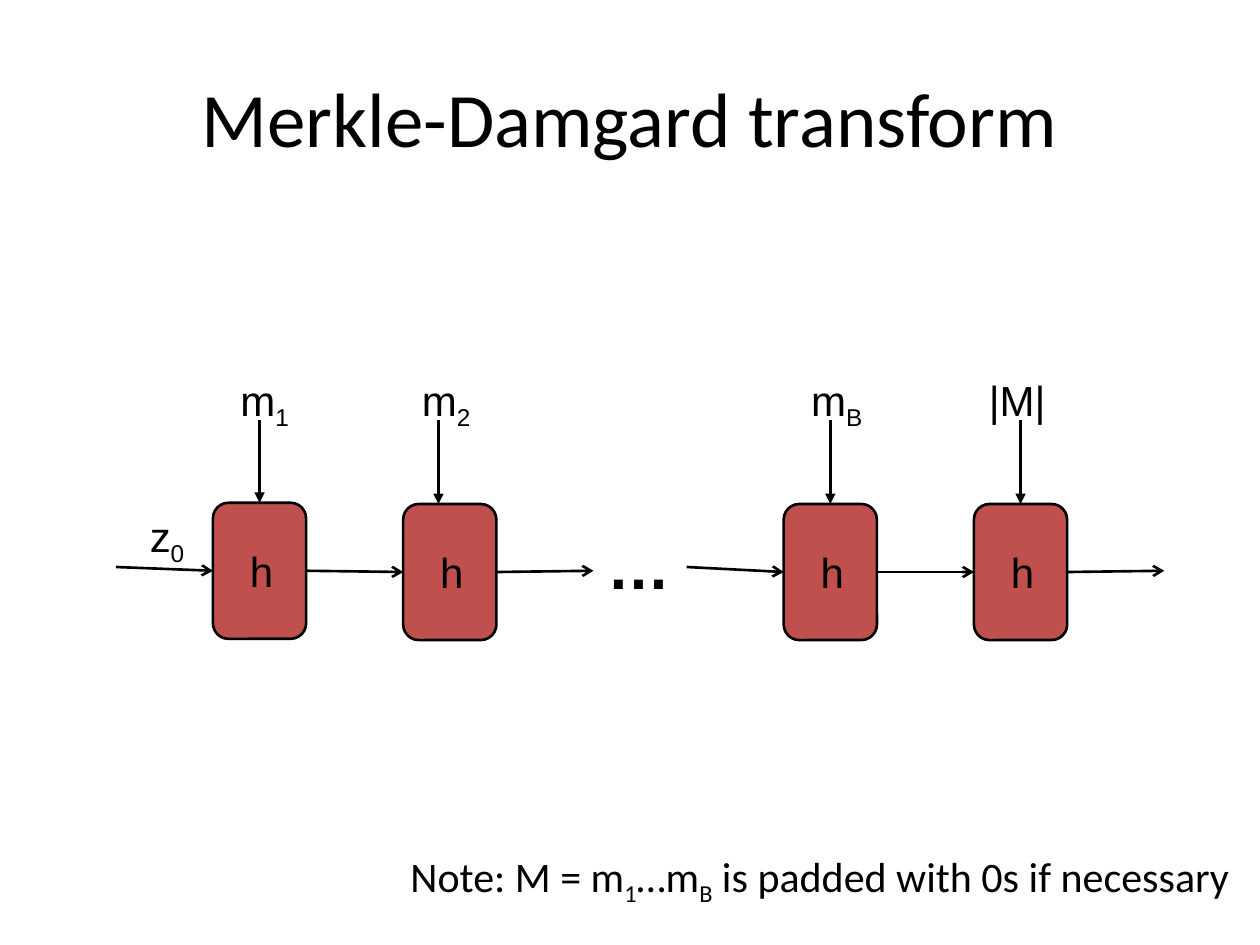
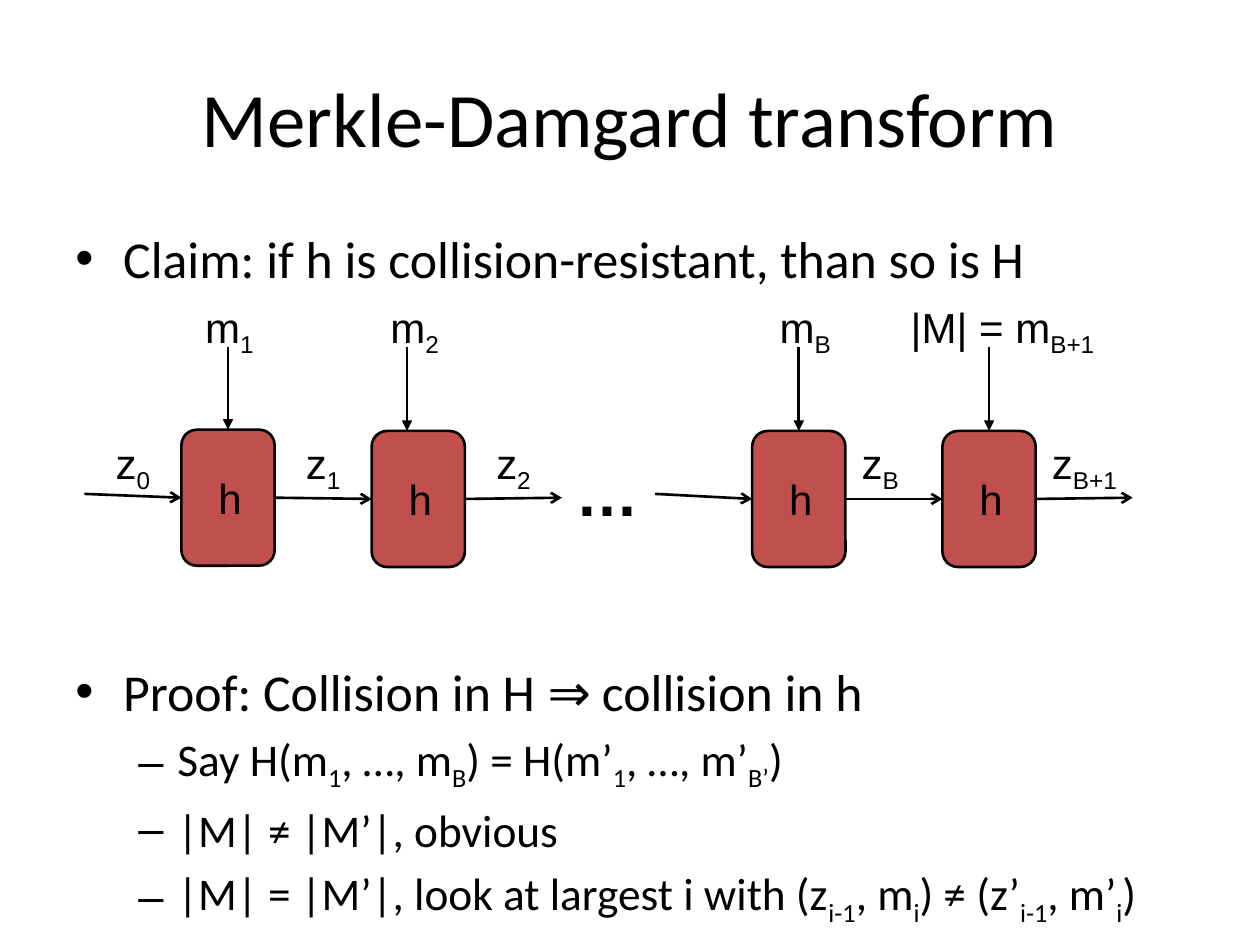
"""Build two slides on the Merkle-Damgard transform."""
from lxml.etree import SubElement
from pptx import Presentation
from pptx.dml.color import RGBColor as RGB
from pptx.enum.shapes import MSO_CONNECTOR as LINE, MSO_SHAPE as SHAPE
from pptx.enum.text import MSO_ANCHOR as ANCHOR, MSO_AUTO_SIZE as FIT, PP_ALIGN as ALIGN
from pptx.oxml.ns import qn
from pptx.util import Inches, Pt

COLORS = {"ink": "000000", "block": "C0504D", "page": "FFFFFF"}

prs = Presentation()
prs.slide_width, prs.slide_height = Inches(10), Inches(7.5)
COL, ROW = prs.slide_width / 100, prs.slide_height / 75


def text(s, x, y, w, h, lines, size=24, font="Arial", wrap=False):
    """Write lines in a text box; parts between tildes are subscripts."""
    sp = s.shapes.add_textbox(int(x * COL), int(y * ROW), int(w * COL), int(h * ROW))
    tf = sp.text_frame
    tf.word_wrap = wrap
    tf.auto_size = FIT.NONE if wrap else FIT.SHAPE_TO_FIT_TEXT
    for i, line in enumerate(lines):
        p = tf.add_paragraph() if i else tf.paragraphs[0]
        for j, part in enumerate(line.split("~")):
            if part:
                r = p.add_run()
                r.text = part
                r.font.size, r.font.name = Pt(size), font
                r.font.color.rgb = RGB.from_string(COLORS["ink"])
                if j % 2:
                    r.font._element.set("baseline", "-25000")
    return tf


def arrow(s, start, end, head, src=None, dst=None, sides=(3, 1)):
    """Draw an arrow and join it to the blocks given."""
    c = s.shapes.add_connector(LINE.STRAIGHT, int(start[0] * COL), int(start[1] * ROW),
                               int(end[0] * COL), int(end[1] * ROW))
    if src is not None:
        c.begin_connect(src, sides[0])
    if dst is not None:
        c.end_connect(dst, sides[1])
    c.line.width = Pt(1.5)
    c.line.color.rgb = RGB.from_string(COLORS["ink"])
    SubElement(c.line._get_or_add_ln(), qn("a:tailEnd"), type=head)
    SubElement(c._element.spPr, qn("a:effectLst"))


PITCH, GAP, BLOCK_W, BLOCK_H = 15.1, 7.7, 7.4, 10.8
chains = [
    {"x": 9.2, "y": 40,
     "inputs": {0: ("m~1~", 18.1, 6.1), 1: ("m~2~", 32.5, 6.1),
                3: ("m~B~", 63.4, 6.3), 4: ("|M|", 77.5, 6.6)},
     "states": {0: ("z~0~", 1.7, 4.9)}},
    {"x": 6.7, "y": 34.2,
     "inputs": {0: ("m~1~", 15.3, 6.1), 1: ("m~2~", 30, 6.1),
                3: ("m~B~", 60.9, 6.3), 4: ("|M| = m~B+1~", 71.3, 17.3)},
     "states": {0: ("z~0~", 1.5, 4.9), 1: ("z~1~", 1.5, 4.9), 2: ("z~2~", 1.5, 4.9),
                4: ("z~B~", 0.3, 5.2), 5: ("z~B+1~", 0.3, 7.8)}},
]

slides = []
for chain in chains:
    s = prs.slides.add_slide(prs.slide_layouts[6])
    slides.append(s)
    s.background.fill.solid()
    s.background.fill.fore_color.rgb = RGB.from_string(COLORS["page"])
    tf = text(s, 5, 3, 90, 12.5, ["Merkle-Damgard transform"], 44, "Calibri", True)
    tf.vertical_anchor = ANCHOR.MIDDLE
    tf.paragraphs[0].alignment = ALIGN.CENTER

    x0, y0, blocks = chain["x"], chain["y"], {}
    for slot, (label, label_x, label_w) in chain["inputs"].items():
        x, y = x0 + GAP + slot * PITCH, y0 if slot else y0 - 0.1
        sp = s.shapes.add_shape(SHAPE.ROUNDED_RECTANGLE, int(x * COL), int(y * ROW),
                                int(BLOCK_W * COL), int(BLOCK_H * ROW))
        sp.shadow.inherit = False
        sp.fill.solid()
        sp.fill.fore_color.rgb = RGB.from_string(COLORS["block"])
        sp.line.color.rgb = RGB.from_string(COLORS["ink"])
        sp.line.width = Pt(1.5)
        blocks[slot] = sp
        text(s, x + 1.95, y + 2.9, 3.9, 5.1, ["h"])
        text(s, label_x, y0 - 10.8, label_w, 5, [label])
        mid = x + BLOCK_W / 2 - (0.9 if slot == 1 else 0)
        arrow(s, (mid, y0 - 6.7), (mid, y), "triangle",
              dst=None if slot == 1 else sp, sides=(2, 0))

    for slot in range(6):
        x, y = x0 + slot * PITCH, y0 + 5.2
        arrow(s, (x, y - 0.2), (x + GAP, y + 0.1), "arrow",
              blocks.get(slot - 1), blocks.get(slot))
    for slot, (label, shift, width) in chain["states"].items():
        text(s, x0 + slot * PITCH + shift, y0, width, 5, [label])
    tf = text(s, x0 + 38, y0 + 1.3, 7.1, 7.1, ["…"], 36)
    tf.paragraphs[0].runs[0].font.bold = True

text(slides[0], 31.6, 67, 67.4, 5,
     ["Note: M = m~1~…m~B~ is padded with 0s if necessary"], 24, "Calibri")

body = text(slides[1], 5, 17.5, 90, 49.5, [
    "Claim: if h is collision-resistant, than so is H",
    "Proof: Collision in H ⇒ collision in h",
    "Say H(m~1~, …, m~B~) = H(m’~1~, …, m’~B’~)",
    "|M| ≠ |M’|, obvious",
    "|M| = |M’|, look at largest i with (z~i-1~, m~i~) ≠ (z’~i-1~, m’~i~)",
], 29.6, "Calibri", True)
for i, p in enumerate(body.paragraphs):
    sub = i > 1
    p.level = int(sub)
    p.space_before = Pt(212 if i == 1 else 5.2)
    pPr = p._p.get_or_add_pPr()
    pPr.set("marL", str(Inches(0.81 if sub else 0.38)))
    pPr.set("indent", str(Inches(-0.31 if sub else -0.38)))
    SubElement(pPr, qn("a:buFont"), typeface="Arial")
    SubElement(pPr, qn("a:buChar"), char="–" if sub else "•")
    for r in p.runs:
        r.font.size = Pt(25.9 if sub else 29.6)

prs.save("out.pptx")
